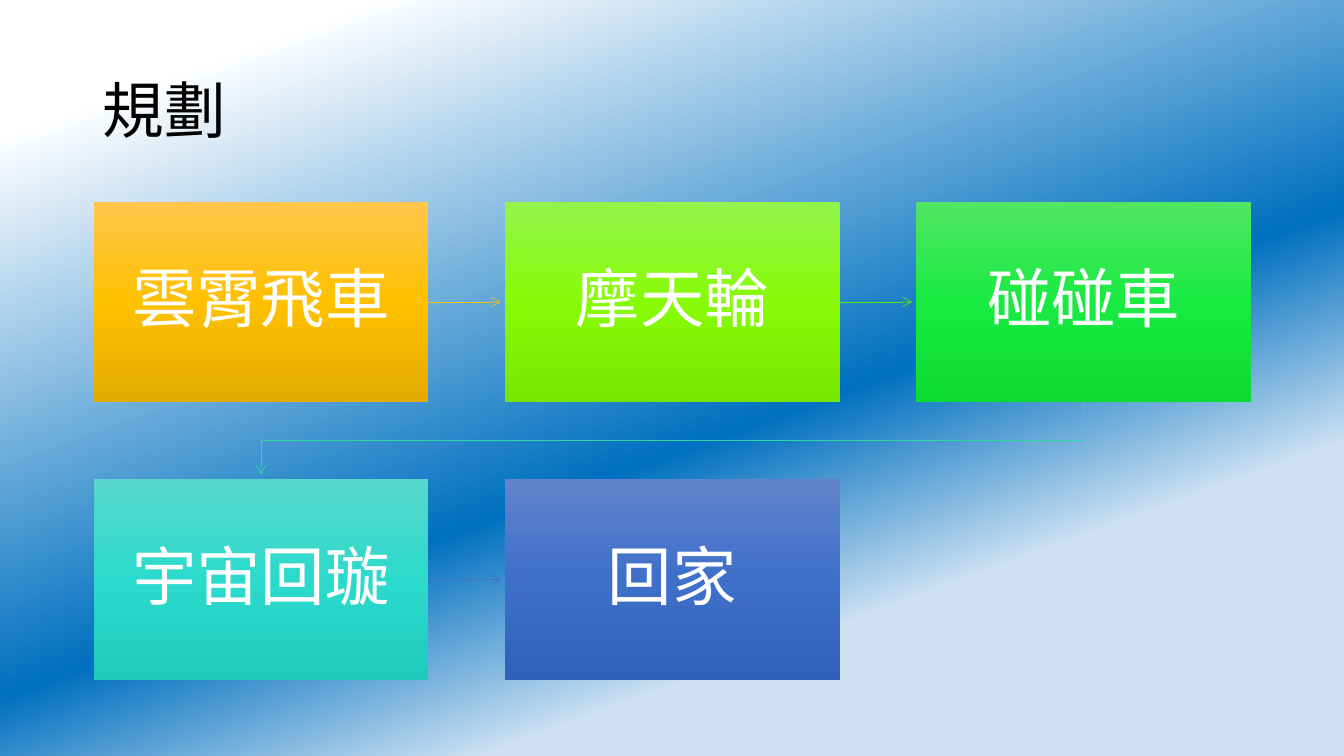
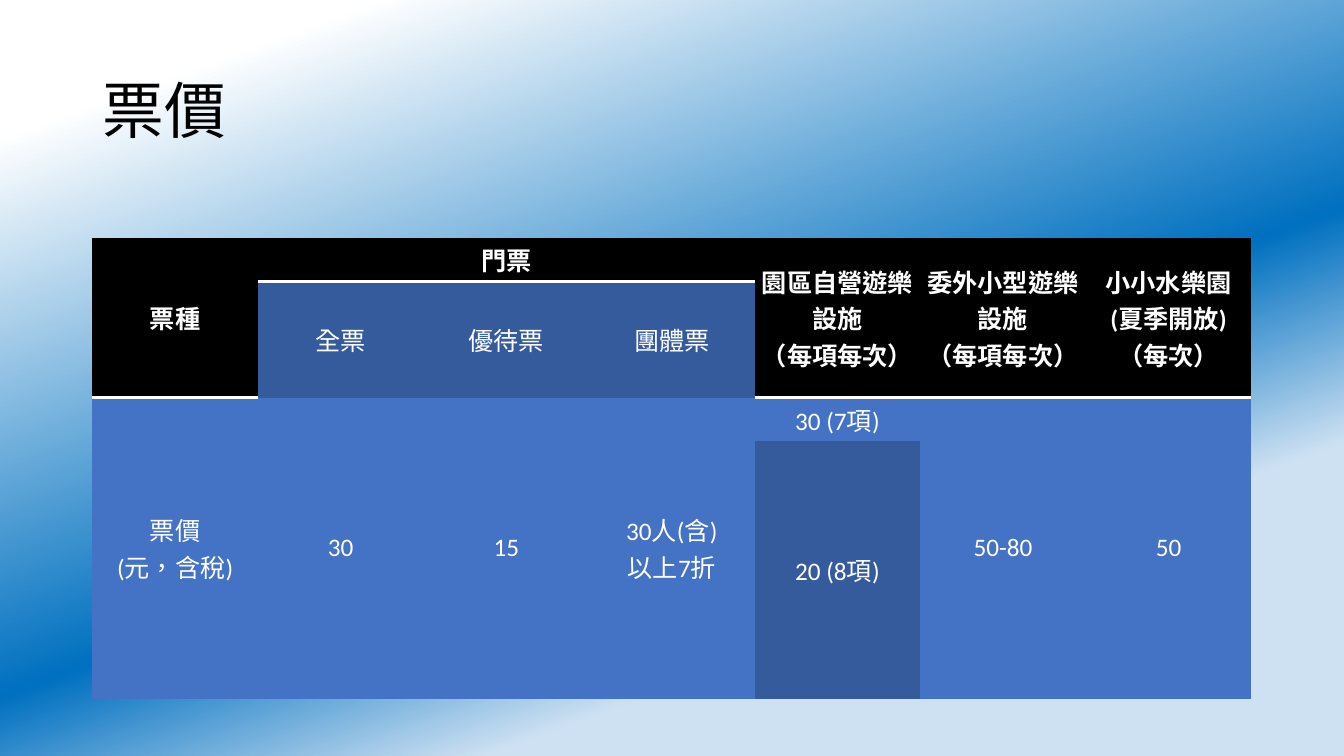
import pptx
import pptx.dml.color
import pptx.enum.dml
import pptx.enum.lang
import pptx.enum.shapes
import pptx.enum.text
import pptx.oxml
import pptx.oxml.ns
import pptx.util
from lxml import etree

Pt = pptx.util.Pt
qn = pptx.oxml.ns.qn
ALIGN = pptx.enum.text.PP_ALIGN
MIDDLE = pptx.enum.text.MSO_ANCHOR.MIDDLE

FONT = "Calibri"
BLACK, WHITE = "000000", "FFFFFF"
BLUE, DARK_BLUE = "4472C4", "365B9D"
BACKGROUND_STOPS = [(11, WHITE), (56, "0070C0"), (75, "CEE1F2")]
NO_GRID_STYLE = "{2D5ABB26-0587-4C30-8999-92F81FD0307C}"

BOX_LEFT, BOX_TOP = 66.9, 144
BOX_WIDTH, BOX_HEIGHT = 239, 143.4
COLUMN_PITCH, ROW_PITCH = 293.8, 198.2
BOXES_PER_ROW = 3
ARROW_GAP = 3

# Name, gradient colours from top to bottom, colour of the arrow to the next box
RIDES = [
    ("雲霄飛車", ("FFC64B", "FFC000", "E3AB00"), "FFC000"),
    ("摩天輪", ("94F44C", "87FB06", "78E500"), "53EB17"),
    ("碰碰車", ("51E663", "19EA42", "0CDB34"), "2ED7A1"),
    ("宇宙回璇", ("58D8CC", "2BDACC", "1ECBBD"), BLUE),
    ("回家", ("6183CB", "3E70CA", "3062BB"), None),
]

TABLE_LEFT, TABLE_TOP, TABLE_WIDTH = 66, 170, 828
ROW_HEIGHTS = [31, 83, 31, 184]
COLUMN_COUNT = 7

# Row, column, rows spanned, columns spanned, text, fill
PRICE_CELLS = [
    (0, 0, 2, 1, "票種", BLACK),
    (0, 1, 1, 3, "門票", BLACK),
    (0, 4, 2, 1, "園區自營遊樂設施\n（每項每次）", BLACK),
    (0, 5, 2, 1, "委外小型遊樂設施\n（每項每次）", BLACK),
    (0, 6, 2, 1, "小小水樂園\n(夏季開放)\n（每次）", BLACK),
    (1, 1, 1, 1, "全票", DARK_BLUE),
    (1, 2, 1, 1, "優待票", DARK_BLUE),
    (1, 3, 1, 1, "團體票", DARK_BLUE),
    (2, 0, 2, 1, "票價\n(元，含稅)", BLUE),
    (2, 1, 2, 1, "30", BLUE),
    (2, 2, 2, 1, "15", BLUE),
    (2, 3, 2, 1, "30人(含)\n以上7折", BLUE),
    (2, 4, 1, 1, "30 (7項)", BLUE),
    (2, 5, 2, 1, "50-80", BLUE),
    (2, 6, 2, 1, "50", BLUE),
    (3, 4, 1, 1, "20 (8項)", DARK_BLUE),
]


def color(hex_string):
    return pptx.dml.color.RGBColor.from_string(hex_string)


def set_solid(fill, hex_string):
    fill.solid()
    fill.fore_color.rgb = color(hex_string)


def set_gradient(fill, element, stops, angle):
    """Fill with (percent, colour) stops; the angle runs clockwise."""
    fill.gradient()
    fill.gradient_angle = 360 - angle
    stop_list = element.find(".//" + qn("a:gsLst"))
    for stop in list(stop_list):
        stop_list.remove(stop)
    for percent, hex_string in stops:
        stop = etree.SubElement(stop_list, qn("a:gs"), pos=str(percent * 1000))
        etree.SubElement(stop, qn("a:srgbClr"), val=hex_string)


def write_text(text_frame, text, size, hex_string, align, bold=False, spacing=1.0):
    """Write one paragraph, with a line break at each newline."""
    paragraph = text_frame.paragraphs[0]
    paragraph.alignment = align
    paragraph.line_spacing = spacing
    for index, line in enumerate(text.split("\n")):
        if index:
            paragraph.add_line_break()
        run = paragraph.add_run()
        run.text = line
        run.font.name = FONT
        run.font.size = Pt(size)
        run.font.bold = bold
        run.font.color.rgb = color(hex_string)
        run.font.language_id = pptx.enum.lang.MSO_LANGUAGE_ID.TRADITIONAL_CHINESE


def add_titled_slide(presentation, text):
    slide = presentation.slides.add_slide(presentation.slide_layouts[5])
    title = slide.shapes.title
    title.left, title.top = Pt(66), Pt(28.8)
    title.width, title.height = Pt(828), Pt(104.4)
    text_frame = title.text_frame
    text_frame.word_wrap = True
    text_frame.auto_size = pptx.enum.text.MSO_AUTO_SIZE.NONE
    text_frame.vertical_anchor = MIDDLE
    write_text(text_frame, text, 44, BLACK, ALIGN.LEFT, spacing=0.9)
    return slide


def add_box(slide, index, text, colors):
    row, column = divmod(index, BOXES_PER_ROW)
    box = slide.shapes.add_shape(
        pptx.enum.shapes.MSO_SHAPE.RECTANGLE,
        Pt(BOX_LEFT + column * COLUMN_PITCH), Pt(BOX_TOP + row * ROW_PITCH),
        Pt(BOX_WIDTH), Pt(BOX_HEIGHT))
    box.shadow.inherit = False
    box.line.fill.background()
    set_gradient(box.fill, box._element, zip((0, 50, 100), colors), 90)
    text_frame = box.text_frame
    text_frame.word_wrap = True
    text_frame.vertical_anchor = MIDDLE
    text_frame.margin_left = text_frame.margin_right = Pt(25.6)
    text_frame.margin_top = text_frame.margin_bottom = Pt(25.6)
    write_text(text_frame, text, 46, WHITE, ALIGN.CENTER, spacing=0.9)
    return box


def style_arrow(arrow, hex_string):
    arrow.line.width = Pt(0.5)
    set_solid(arrow.line.fill, hex_string)
    properties = arrow._element.spPr
    etree.SubElement(properties.find(qn("a:ln")), qn("a:tailEnd"), type="arrow")
    etree.SubElement(properties, qn("a:effectLst"))


def add_straight_arrow(slide, source, target, hex_string):
    middle = source.top + source.height // 2
    arrow = slide.shapes.add_connector(
        pptx.enum.shapes.MSO_CONNECTOR.STRAIGHT,
        source.left + source.width, middle, target.left - Pt(ARROW_GAP), middle)
    arrow.begin_connect(source, 3)
    style_arrow(arrow, hex_string)


def add_return_arrow(slide, source, target, hex_string):
    """Lead from the end of one row down to the start of the next."""
    start_x = source.left + source.width // 2
    end_x = target.left + target.width // 2
    start_y = source.top + source.height
    middle_y = (start_y + target.top) // 2
    builder = slide.shapes.build_freeform(start_x, start_y)
    builder.add_line_segments(
        [(start_x, middle_y), (end_x, middle_y), (end_x, target.top - Pt(ARROW_GAP))],
        close=False)
    arrow = builder.convert_to_shape()
    arrow.fill.background()
    style_arrow(arrow, hex_string)


def add_bottom_border(cell):
    properties = cell._tc.get_or_add_tcPr()
    border = etree.Element(qn("a:lnB"), w=str(Pt(2)))
    fill = etree.SubElement(border, qn("a:solidFill"))
    etree.SubElement(fill, qn("a:srgbClr"), val=WHITE)
    properties.insert(0, border)


def add_price_table(slide):
    table = slide.shapes.add_table(
        len(ROW_HEIGHTS), COLUMN_COUNT, Pt(TABLE_LEFT), Pt(TABLE_TOP),
        Pt(TABLE_WIDTH), Pt(sum(ROW_HEIGHTS))).table
    table.first_row = table.horz_banding = False
    table._tbl.tblPr.find(qn("a:tableStyleId")).text = NO_GRID_STYLE
    for column in table.columns:
        column.width = Pt(TABLE_WIDTH / COLUMN_COUNT)
    for row, height in zip(table.rows, ROW_HEIGHTS):
        row.height = Pt(height)
    for row, column, row_span, column_span, text, fill in PRICE_CELLS:
        is_header = fill == BLACK
        cell = table.cell(row, column)
        if row_span * column_span > 1:
            cell.merge(table.cell(row + row_span - 1, column + column_span - 1))
        for covered_row in range(row, row + row_span):
            for covered_column in range(column, column + column_span):
                covered = table.cell(covered_row, covered_column)
                set_solid(covered.fill, fill)
                covered.margin_left = covered.margin_right = Pt(2.2)
                covered.margin_top = covered.margin_bottom = Pt(2.2)
                if is_header:
                    add_bottom_border(covered)
        cell.vertical_anchor = MIDDLE
        write_text(cell.text_frame, text, 18, WHITE, ALIGN.CENTER, bold=is_header)


def add_plan_slide(presentation):
    slide = add_titled_slide(presentation, "規劃")
    boxes = [add_box(slide, index, text, colors)
             for index, (text, colors, _) in enumerate(RIDES)]
    for source, target, (_, _, arrow_color) in zip(boxes, boxes[1:], RIDES):
        add_arrow = add_straight_arrow if source.top == target.top else add_return_arrow
        add_arrow(slide, source, target, arrow_color)


def add_price_slide(presentation):
    slide = add_titled_slide(presentation, "票價")
    add_price_table(slide)


def main():
    presentation = pptx.Presentation()
    presentation.slide_width, presentation.slide_height = Pt(960), Pt(540)
    master = presentation.slide_master
    set_gradient(master.background.fill, master._element, BACKGROUND_STOPS, 70)
    add_plan_slide(presentation)
    add_price_slide(presentation)
    presentation.save("out.pptx")


if __name__ == "__main__":
    main()
